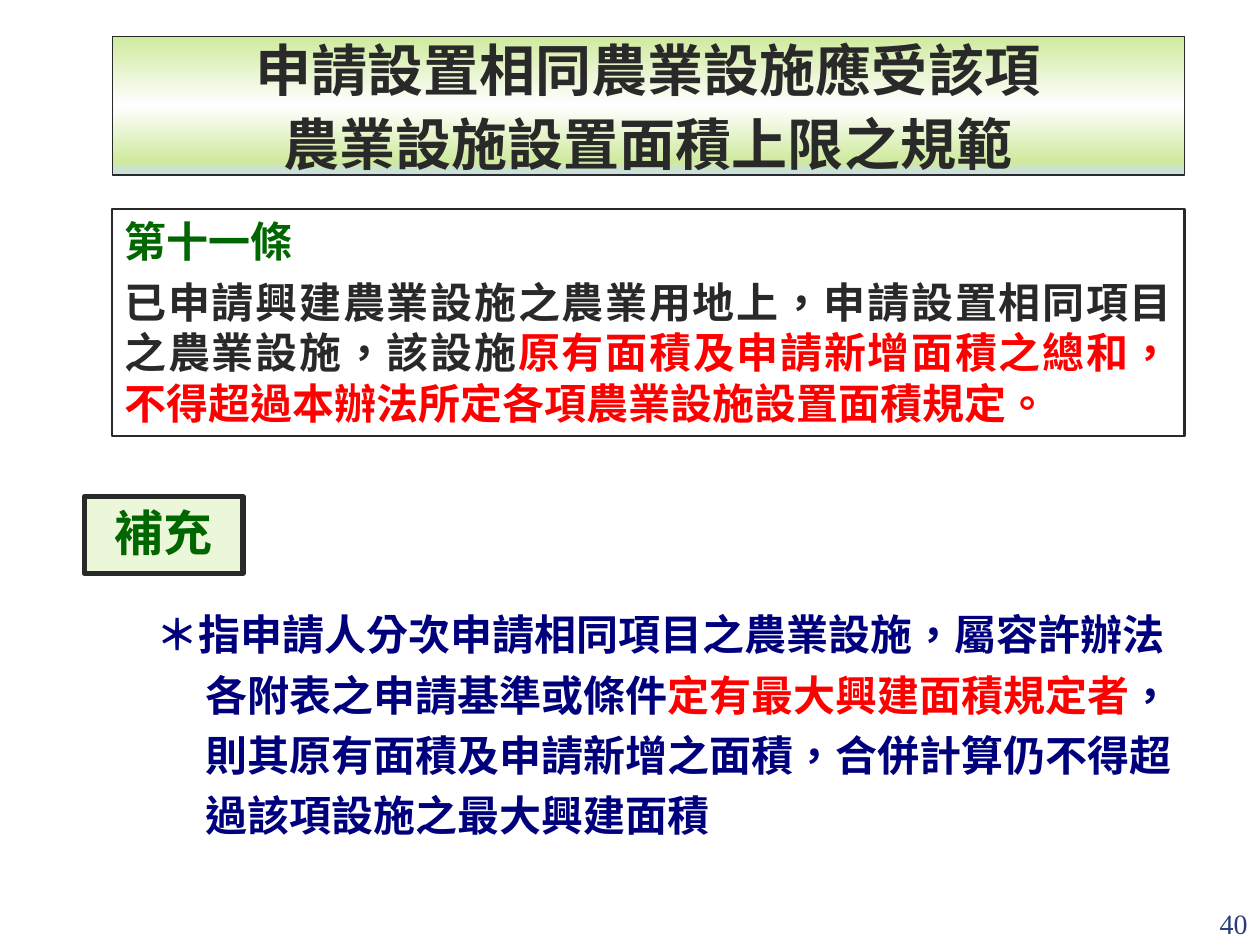
from pptx import Presentation, oxml, util as u
from pptx.dml.color import RGBColor
from pptx.enum import lang, shapes, text
from pptx.oxml.ns import nsdecls, qn

INK = RGBColor(0x29, 0x29, 0x29)
GREEN = RGBColor(0x00, 0x66, 0x00)
RED = RGBColor(0xFF, 0x00, 0x00)
NAVY = RGBColor(0x00, 0x00, 0x7D)
PAGE_BLUE = RGBColor(0x2A, 0x3D, 0x7A)
PALE_GREEN = RGBColor(0xEC, 0xF7, 0xD9)
LIME = RGBColor(0xCF, 0xEA, 0x9E)
WHITE = RGBColor(0xFF, 0xFF, 0xFF)
SKY = RGBColor(0xC9, 0xDD, 0xF1)

LATIN, HAN = "Times New Roman", "Noto Sans CJK SC"
WIDTH, HEIGHT = 10, 7.5
LEFT, COLUMN = 0.89, 8.51  # shared by the title and the article


def place(part, box):
    part.left, part.top, part.width, part.height = map(u.Inches, box)


def add_run(paragraph, words, size, color, font=HAN, bold=True):
    run = paragraph.add_run()
    run.text = words
    run.font.name, run.font.size, run.font.bold = font, u.Pt(size), bold
    run.font.color.rgb = color
    run.font.language_id = lang.MSO_LANGUAGE_ID.TRADITIONAL_CHINESE
    east_asian = oxml.parse_xml(f'<a:ea {nsdecls("a")} typeface="{HAN}"/>')
    run.font._element.find(qn("a:latin")).addnext(east_asian)


def add_box(slide, box, line_width, fill=None):
    panel = slide.shapes.add_shape(shapes.MSO_SHAPE.RECTANGLE, *map(u.Inches, box))
    panel.shadow.inherit = False
    if fill is None:
        panel.fill.background()
    else:
        panel.fill.solid()
        panel.fill.fore_color.rgb = fill
    panel.line.color.rgb = INK
    panel.line.width = u.Pt(line_width)
    frame = panel.text_frame
    frame.word_wrap = True
    frame.vertical_anchor = text.MSO_ANCHOR.TOP
    return frame


def add_title(slide, box):
    title = slide.shapes.title
    place(title, box)
    # Rounded outline with a vertical gradient
    stops = "".join(
        f'<a:gs pos="{share * 1000}"><a:srgbClr val="{color}"/></a:gs>'
        for share, color in ((0, LIME), (50, WHITE), (90, LIME), (100, SKY)))
    outline = oxml.parse_xml(
        f'<a:prstGeom {nsdecls("a")} prst="roundRect"><a:avLst/></a:prstGeom>')
    gradient = oxml.parse_xml(
        f'<a:gradFill {nsdecls("a")} rotWithShape="1"><a:gsLst>{stops}</a:gsLst>'
        '<a:lin ang="5400000" scaled="1"/></a:gradFill>')
    title._element.spPr.extend([outline, gradient])
    title.line.color.rgb = INK
    title.line.width = u.Pt(0.75)

    frame = title.text_frame
    frame.auto_size = text.MSO_AUTO_SIZE.NONE
    frame.word_wrap = False
    frame.vertical_anchor = text.MSO_ANCHOR.MIDDLE
    first, second = frame.paragraphs[0], frame.add_paragraph()
    second.line_spacing = 1.1
    for line, words in ((first, "申請設置相同農業設施應受該項"),
                        (second, "農業設施設置面積上限之規範")):
        line.alignment = text.PP_ALIGN.CENTER
        add_run(line, words, 32, INK, LATIN)


def add_article(slide, box):
    frame = add_box(slide, box, 1.5)
    heading, clause = frame.paragraphs[0], frame.add_paragraph()
    heading.alignment = text.PP_ALIGN.LEFT
    add_run(heading, "第十一條", 24, GREEN, LATIN)
    clause.alignment = text.PP_ALIGN.JUSTIFY
    clause.space_before = u.Pt(6)
    add_run(clause, "已申請興建農業設施之農業用地上，申請設置相同項目之農業設施，該設施", 24, INK)
    add_run(clause, "原有面積及申請新增面積之總和，不得超過本辦法所定各項農業設施設置面積規定。", 24, RED)


def add_supplement_label(slide, box):
    label = add_box(slide, box, 3, PALE_GREEN).paragraphs[0]
    label.alignment = text.PP_ALIGN.CENTER
    add_run(label, "補充", 28, GREEN)


def add_explanation(slide, box):
    body = slide.placeholders[1]
    place(body, box)
    body.text_frame.auto_size = text.MSO_AUTO_SIZE.NONE
    note = body.text_frame.paragraphs[0]
    # Hanging indent behind the asterisk, without a bullet
    properties = note._p.get_or_add_pPr()
    properties.set("marL", str(u.Inches(0.39)))
    properties.set("indent", str(u.Inches(-0.39)))
    properties.append(oxml.parse_xml(f'<a:buNone {nsdecls("a")}/>'))
    note.line_spacing = 1.2
    note.space_before = u.Pt(0)
    add_run(note, "＊", 24, NAVY)
    add_run(note, "指申請人分次申請相同項目之農業設施，屬容許辦法各附表之申請基準或條件", 24, NAVY, LATIN)
    add_run(note, "定有最大興建面積規定者", 24, RED, LATIN)
    add_run(note, "，則其原有面積及申請新增之面積，合併計算仍不得超過該項設施之最大興建面積", 24, NAVY, LATIN)


def add_page_number(slide, box):
    frame = slide.shapes.add_textbox(*map(u.Inches, box)).text_frame
    frame.word_wrap = True
    frame.vertical_anchor = text.MSO_ANCHOR.BOTTOM
    number = frame.paragraphs[0]
    number.alignment = text.PP_ALIGN.RIGHT
    add_run(number, "40", 16, PAGE_BLUE, LATIN, bold=False)


def main():
    deck = Presentation()
    deck.slide_width, deck.slide_height = u.Inches(WIDTH), u.Inches(HEIGHT)
    slide = deck.slides.add_slide(deck.slide_layouts[1])
    add_title(slide, (LEFT, 0.29, COLUMN, 1.1))
    add_article(slide, (LEFT, 1.66, COLUMN, 1.8))
    add_supplement_label(slide, (0.67, 3.94, 1.26, 0.61))
    add_explanation(slide, (1.14, 4.7, 8.27, 2.04))
    add_page_number(slide, (WIDTH - 1, HEIGHT - 0.49, 1, 0.5))
    deck.save("out.pptx")


if __name__ == "__main__":
    main()
